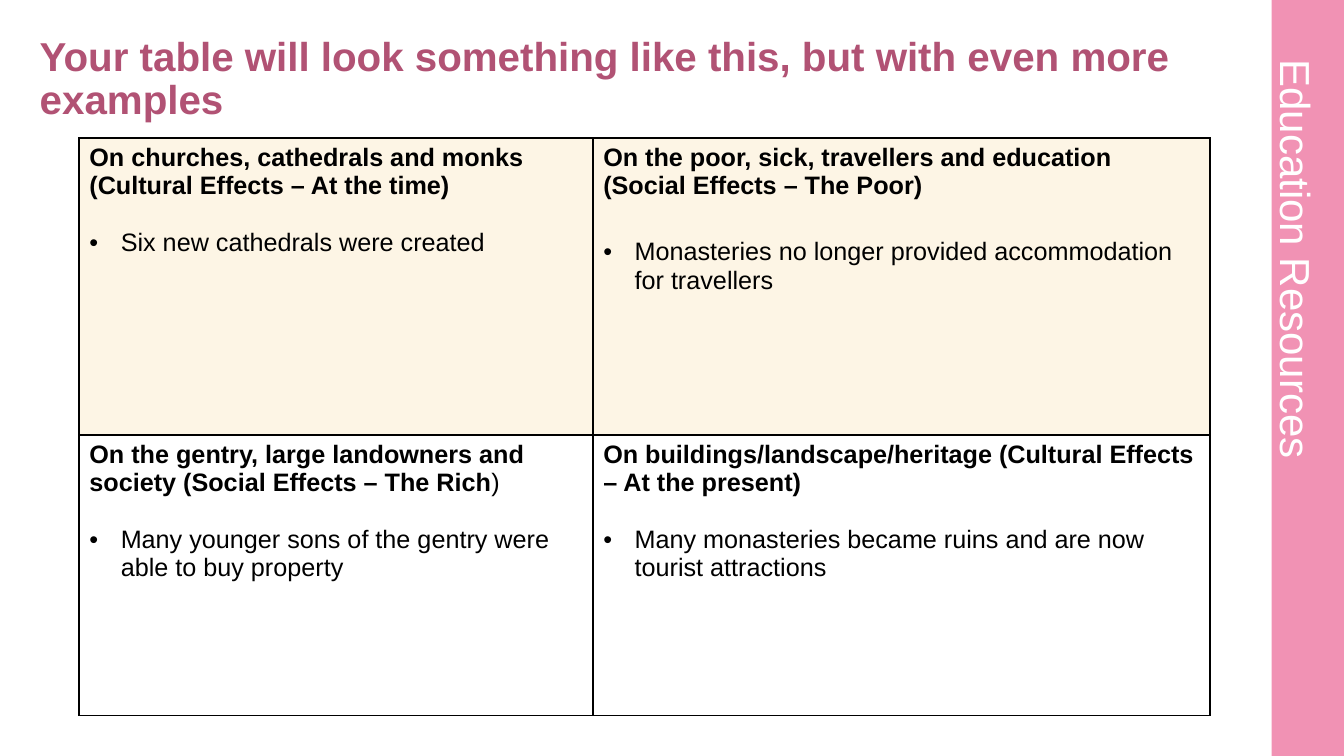
from dataclasses import dataclass
from lxml import etree
from pptx import Presentation
from pptx.dml.color import RGBColor
from pptx.enum.shapes import MSO_SHAPE
from pptx.enum.text import MSO_ANCHOR, MSO_AUTO_SIZE, PP_ALIGN
from pptx.oxml.ns import qn
from pptx.util import Cm, Pt

RECT = MSO_SHAPE.RECTANGLE
MIDDLE = MSO_ANCHOR.MIDDLE
FIXED = MSO_AUTO_SIZE.NONE
LEFT, CENTER = PP_ALIGN.LEFT, PP_ALIGN.CENTER


@dataclass(frozen=True)
class Theme:
    font: str = "Arial"
    pink: str = "F192B4"
    rose: str = "B15274"
    cream: str = "FDF5E5"
    white: str = "FFFFFF"
    black: str = "000000"
    title: float = 28.8
    side: float = 30
    body: float = 18
    rule: float = 1.5


THEME = Theme()
WIDE, HIGH = 33.87, 19.05
COLS = (12.95, 15.54)
ROWS = (7.49, 7.06)
FILLS = (THEME.cream, None)
CELLS = (
    (
        ("On churches, cathedrals and monks (Cultural Effects – At the time)", "",
         "Six new cathedrals were created", 20.5),
        ("On the poor, sick, travellers and education (Social Effects – The Poor)", "",
         "Monasteries no longer provided accommodation for travellers", 27.5),
    ),
    (
        ("On the gentry, large landowners and society (Social Effects – The Rich", ")",
         "Many younger sons of the gentry were able to buy property", 20.5),
        ("On buildings/landscape/heritage (Cultural Effects – At the present)", "",
         "Many monasteries became ruins and are now tourist attractions", 20.5),
    ),
)


def write(para, text, size=THEME.body, color=THEME.black, bold=False,
          align=LEFT, line=None, before=0, bullet=False):
    para.alignment = align
    para.space_before = Pt(before)
    if line:
        para.line_spacing = line
    if bullet:
        props = para._p.get_or_add_pPr()
        props.set("marL", str(Cm(0.79)))
        props.set("indent", str(-Cm(0.79)))
        etree.SubElement(props, qn("a:buFont"), typeface=THEME.font)
        etree.SubElement(props, qn("a:buChar"), char="•")
    run = para.add_run()
    run.text = text
    font = run.font
    font.name, font.size, font.bold = THEME.font, Pt(size), bold
    font.color.rgb = RGBColor.from_string(color)


def frame_cell(cell):
    props = cell._tc.get_or_add_tcPr()
    for spot, side in enumerate(("lnL", "lnR", "lnT", "lnB")):
        edge = etree.Element(qn(f"a:{side}"), w=str(Pt(THEME.rule)))
        fill = etree.SubElement(edge, qn("a:solidFill"))
        etree.SubElement(fill, qn("a:srgbClr"), val=THEME.black)
        props.insert(spot, edge)


def add_side(slide, left, top, width, height):
    band = slide.shapes.add_shape(RECT, Cm(left), Cm(top), Cm(width), Cm(height))
    band.shadow.inherit = False
    band.fill.solid()
    band.fill.fore_color.rgb = RGBColor.from_string(THEME.pink)
    band.line.fill.background()
    length, mid = 10.19, top + 6.53
    label = slide.shapes.add_textbox(
        Cm(left + (width - length) / 2 + 0.25), Cm(mid - width / 2), Cm(length), Cm(width))
    label.rotation = 90
    frame = label.text_frame
    frame.word_wrap = False
    frame.margin_left = frame.margin_right = frame.margin_top = frame.margin_bottom = 0
    write(frame.paragraphs[0], "Education Resources", size=THEME.side,
          color=THEME.white, align=CENTER, line=Pt(58.8))


def add_title(slide, left, top, width, height):
    title = slide.shapes.title
    title.left, title.top = Cm(left), Cm(top)
    title.width, title.height = Cm(width), Cm(height)
    frame = title.text_frame
    frame.auto_size = FIXED
    frame.word_wrap = True
    frame.vertical_anchor = MIDDLE
    frame.margin_left = 0
    write(frame.paragraphs[0],
          "Your table will look something like this, but with even more examples",
          size=THEME.title, color=THEME.rose, bold=True, line=0.9)


def add_grid(slide, left, top, width, height):
    table = slide.shapes.add_table(
        len(ROWS), len(COLS), Cm(left), Cm(top), Cm(width), Cm(height)).table
    table.first_row = table.horz_banding = False
    for col, size in zip(table.columns, COLS):
        col.width = Cm(size)
    for row, size, items, fill in zip(table.rows, ROWS, CELLS, FILLS):
        row.height = Cm(size)
        for cell, (head, tail, point, gap) in zip(row.cells, items):
            if fill:
                cell.fill.solid()
                cell.fill.fore_color.rgb = RGBColor.from_string(fill)
            else:
                cell.fill.background()
            frame_cell(cell)
            para = cell.text_frame.paragraphs[0]
            write(para, head, bold=True)
            if tail:
                write(para, tail)
            write(cell.text_frame.add_paragraph(), point, before=gap, bullet=True)


def main():
    deck = Presentation()
    deck.slide_width, deck.slide_height = Cm(WIDE), Cm(HIGH)
    slide = deck.slides.add_slide(deck.slide_layouts[5])
    add_side(slide, 32.05, 0, WIDE - 32.05, HIGH)
    add_title(slide, 1, 1.02, 30.56, 1.98)
    add_grid(slide, 2, 3.48, sum(COLS), sum(ROWS))
    deck.save("out.pptx")


if __name__ == "__main__":
    main()
